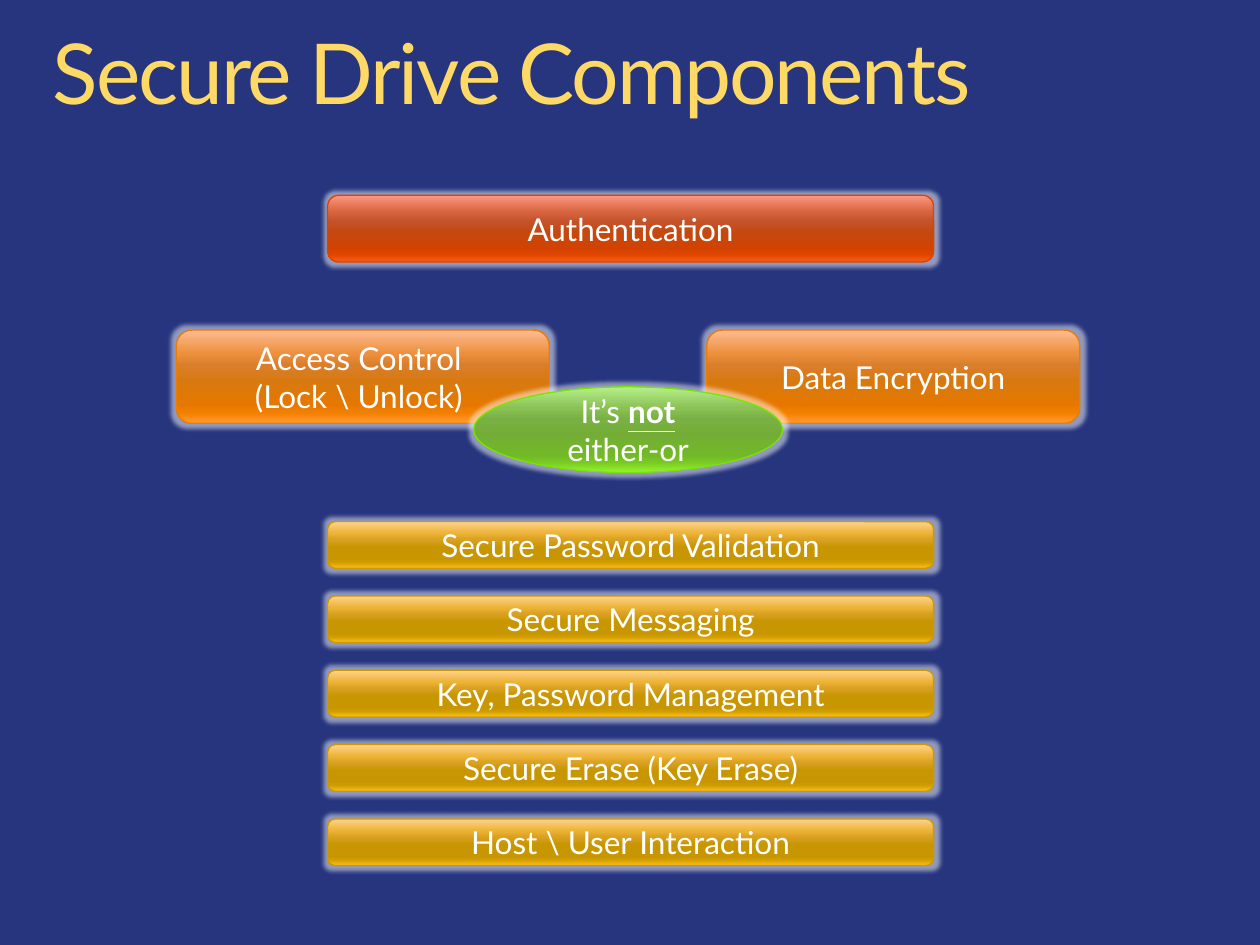
from dataclasses import dataclass

from lxml import etree
from pptx import Presentation
from pptx.dml.color import RGBColor
from pptx.enum.shapes import MSO_SHAPE
from pptx.enum.text import MSO_ANCHOR, MSO_AUTO_SIZE, PP_ALIGN
from pptx.oxml.ns import qn
from pptx.util import Inches, Pt

ROUND = MSO_SHAPE.ROUNDED_RECTANGLE
OVAL = MSO_SHAPE.OVAL
MIDDLE = MSO_ANCHOR.MIDDLE
CENTER = PP_ALIGN.CENTER
GROW = MSO_AUTO_SIZE.SHAPE_TO_FIT_TEXT


@dataclass(frozen=True)
class Tone:
    line: str
    shades: tuple
    stops: tuple = (0, 25, 38, 55, 80, 88, 100)


@dataclass(frozen=True)
class Theme:
    font: str = "Lato"
    head: int = 48
    body: int = 18
    back: str = "26357E"
    text: str = "FFFFFF"
    glow: str = "FFFFFF"
    title: Tone = Tone("", ("FFF2CC", "FFD966", "FFC000"), (0, 41, 100))
    red: Tone = Tone("DA4400", ("FF9782", "D6643E", "C5532C", "C44911",
                                "D34200", "DE4500", "FF5C16"))
    orange: Tone = Tone("ED7C00", ("FFBC93", "EC903D", "D97E2B", "D8790F",
                                   "E67800", "F27F00", "FF9A2E"))
    gold: Tone = Tone("CC9A00", ("FFD390", "ECB335", "DAA123", "C89600",
                                 "C69500", "D19D00", "FFC018"))
    green: Tone = Tone("77E700", ("B6EF8B", "8AC155", "79B044", "73AD35",
                                  "72B828", "78CA22", "94F32F"))


THEME = Theme()


def rgb(code):
    return RGBColor.from_string(code)


def blend(fill, owner, tone):
    fill.gradient()
    fill.gradient_angle = 270
    stops = owner.find(qn("a:gradFill")).find(qn("a:gsLst"))
    for old in list(stops):
        stops.remove(old)
    for place, shade in zip(tone.stops, tone.shades):
        stop = etree.SubElement(stops, qn("a:gs"), pos=str(place * 1000))
        etree.SubElement(stop, qn("a:srgbClr"), val=shade)


def add_glow(shape):
    shape.shadow.inherit = False
    effects = shape._element.spPr.find(qn("a:effectLst"))
    glow = etree.SubElement(effects, qn("a:glow"), rad=str(Pt(5)))
    color = etree.SubElement(glow, qn("a:srgbClr"), val=THEME.glow)
    etree.SubElement(color, qn("a:alpha"), val="50000")


def add_run(para, text, size, strong=False):
    run = para.add_run()
    run.text = text
    run.font.name = THEME.font
    run.font.size = Pt(size)
    run.font.color.rgb = rgb(THEME.text)
    if strong:
        run.font.bold = run.font.underline = True
    return run


def add_title(slide, text):
    box = slide.shapes.add_textbox(
        Inches(0.42), Inches(0.25), Inches(9.16), Inches(0.73))
    frame = box.text_frame
    frame.word_wrap = True
    frame.auto_size = GROW
    frame.margin_left = frame.margin_right = 0
    frame.margin_top = frame.margin_bottom = 0
    para = frame.paragraphs[0]
    para.line_spacing = 0.9
    run = add_run(para, text, THEME.head)
    props = run.font._element
    blend(run.font.fill, props, THEME.title)
    props.set("spc", "-120")


def add_block(slide, kind, place, tone, lines):
    shape = slide.shapes.add_shape(kind, *map(Inches, place))
    blend(shape.fill, shape._element.spPr, tone)
    shape.line.color.rgb = rgb(tone.line)
    shape.line.width = Pt(0.75)
    add_glow(shape)
    frame = shape.text_frame
    frame.word_wrap = True
    frame.vertical_anchor = MIDDLE
    for index, runs in enumerate(lines):
        para = frame.add_paragraph() if index else frame.paragraphs[0]
        para.alignment = CENTER
        for text, strong in runs:
            add_run(para, text, THEME.body, strong)


def add_bar(slide, place, tone, *lines):
    add_block(slide, ROUND, place, tone, [[(line, False)] for line in lines])


def main():
    deck = Presentation()
    deck.slide_width, deck.slide_height = Inches(10), Inches(7.5)
    slide = deck.slides.add_slide(deck.slide_layouts[6])
    slide.background.fill.solid()
    slide.background.fill.fore_color.rgb = rgb(THEME.back)

    add_title(slide, "Secure Drive Components")
    add_bar(slide, (1.4, 2.62, 2.96, 0.74), THEME.orange,
            "Access Control ", "(Lock \\ Unlock) ")
    add_bar(slide, (5.61, 2.62, 2.96, 0.74), THEME.orange, "Data Encryption")
    add_bar(slide, (2.6, 1.55, 4.81, 0.53), THEME.red, "Authentication")

    tasks = ("Secure Password Validation", "Secure Messaging",
             "Key, Password Management", "Secure Erase (Key Erase)",
             "Host \\ User Interaction")
    top, step = 4.14, 0.59
    for index, task in enumerate(tasks):
        add_bar(slide, (2.6, top + index * step, 4.81, 0.37), THEME.gold, task)

    add_block(slide, OVAL, (3.76, 3.07, 2.45, 0.68), THEME.green,
              [[("It’s ", False), ("not", True), (" either-or", False)]])
    deck.save("out.pptx")


if __name__ == "__main__":
    main()
